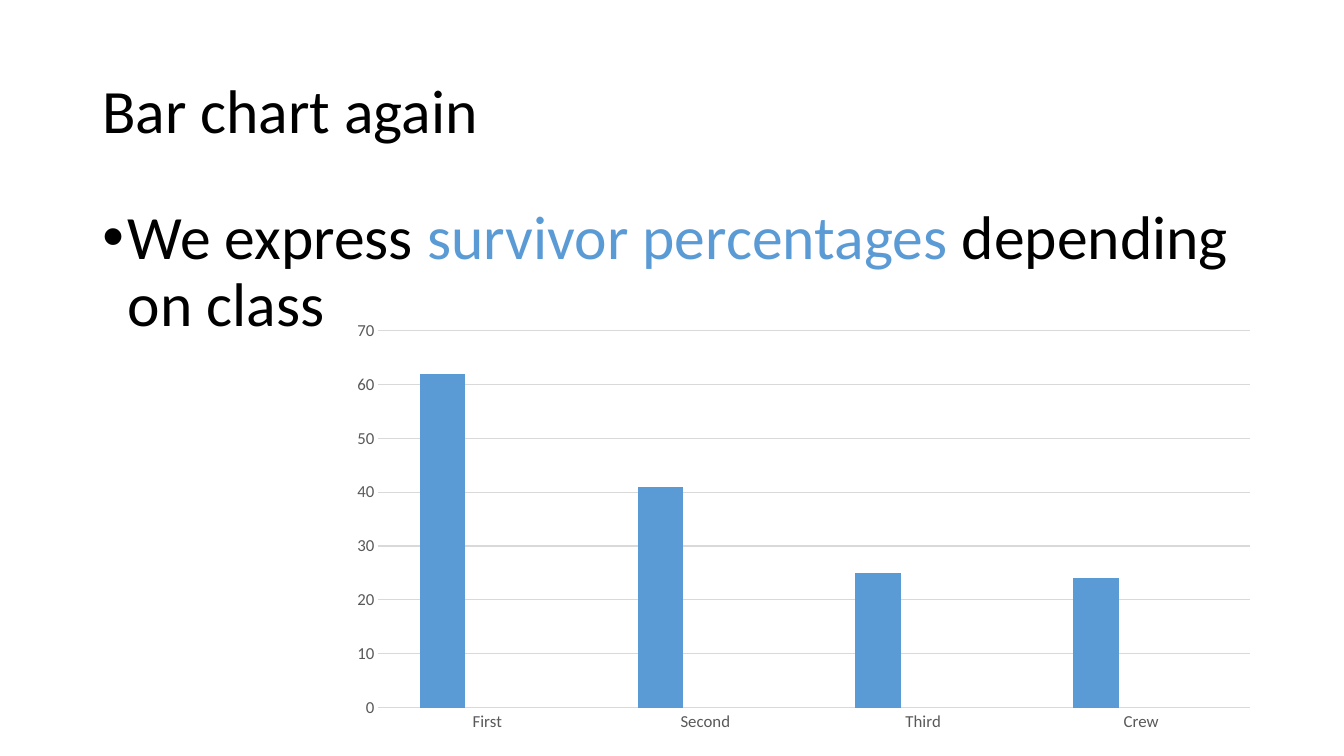
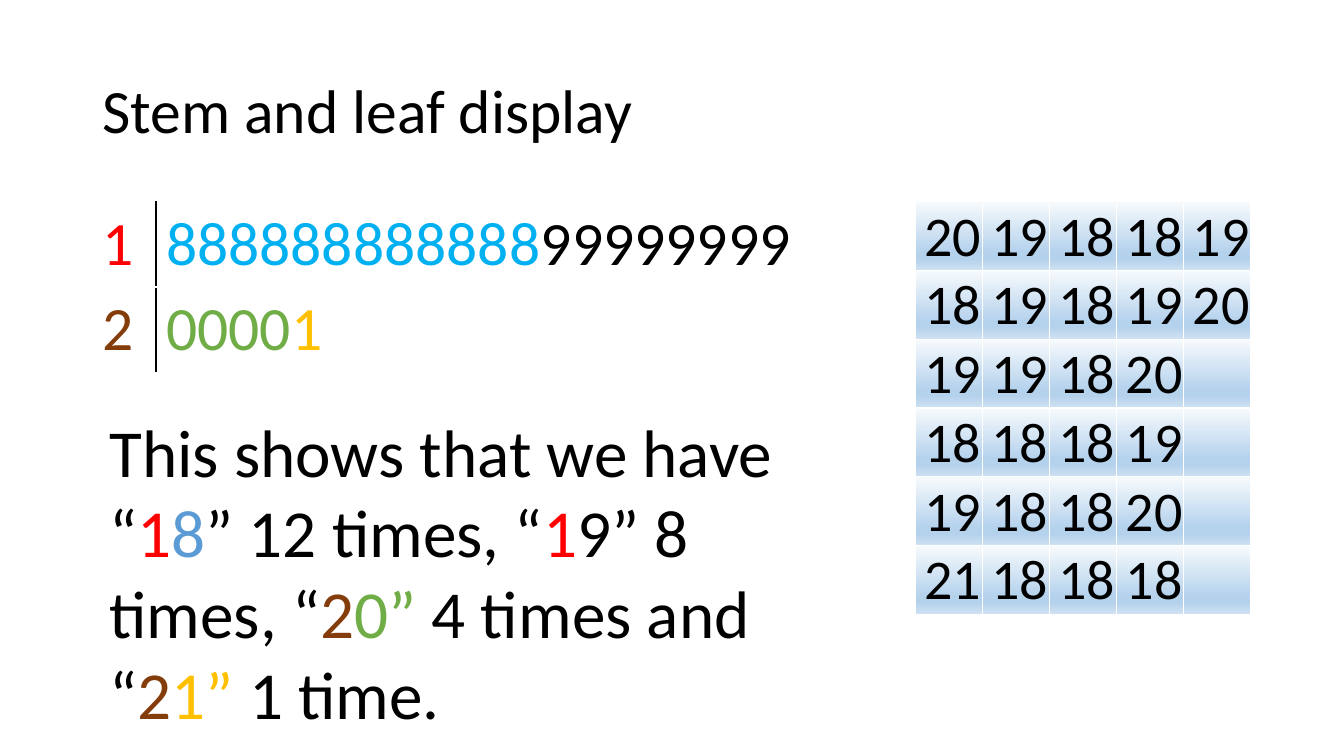
from pptx import Presentation
from pptx.chart.data import CategoryChartData
from pptx.dml.color import RGBColor
from pptx.enum.chart import XL_CHART_TYPE, XL_TICK_MARK
from pptx.enum.text import MSO_ANCHOR, PP_ALIGN
from pptx.oxml import parse_xml
from pptx.oxml.ns import nsdecls
from pptx.util import Cm, Pt

# Shared look
FONT = "Calibri"
BLACK = RGBColor(0x00, 0x00, 0x00)
WHITE = RGBColor(0xFF, 0xFF, 0xFF)
RED = RGBColor(0xFF, 0x00, 0x00)
BLUE = RGBColor(0x5B, 0x9B, 0xD5)
SKY = RGBColor(0x00, 0xB0, 0xF0)
GREEN = RGBColor(0x70, 0xAD, 0x47)
GOLD = RGBColor(0xFF, 0xC0, 0x00)
BROWN = RGBColor(0x84, 0x3C, 0x0B)
ORANGE = RGBColor(0xED, 0x7D, 0x31)
GREY = RGBColor(0xA5, 0xA5, 0xA5)
DARK = RGBColor(0x59, 0x59, 0x59)
PALE = RGBColor(0xD9, 0xD9, 0xD9)
SHADE = [(0, RGBColor(0xF7, 0xFA, 0xFD)), (74, RGBColor(0xB5, 0xD2, 0xEC)),
         (83, RGBColor(0xB5, 0xD2, 0xEC)), (100, RGBColor(0xCE, 0xE1, 0xF2))]

# Boxes in cm: left, top, width, height
LEFT, TOP = 2.33, 5.08
HEAD = (LEFT, 1.01, 29.21, 3.68)
BODY = (LEFT, TOP, 29.21, 12.09)
PLOT = (8.38, 8, 23.14, 11.05)
STEM = (LEFT, TOP, 18.24, 4.3)
LEAF = (23.06, TOP, 8.46, 10.4)
NOTE = (2.51, 10.21, 19.28, 8.46)


def setall(obj, vals):
    for key, val in vals.items():
        setattr(obj, key, val)


def style(font, size, color):
    setall(font, {"name": FONT, "size": Pt(size)})
    font.color.rgb = color


def write(para, parts, size, **form):
    """Fill a paragraph with (text, colour) runs."""
    setall(para, form)
    for text, color in parts:
        run = para.add_run()
        run.text = text
        style(run.font, size, color)


def add_text(slide, box, parts, size, anchor=MSO_ANCHOR.TOP, **form):
    frame = slide.shapes.add_textbox(*map(Cm, box)).text_frame
    setall(frame, {"word_wrap": True, "vertical_anchor": anchor})
    para = frame.paragraphs[0]
    write(para, parts, size, **form)
    return para


def add_page(deck, title):
    slide = deck.slides.add_slide(deck.slide_layouts[6])
    add_text(slide, HEAD, [(title, BLACK)], 44, MSO_ANCHOR.MIDDLE, line_spacing=0.9)
    return slide


def add_point(slide, box, parts):
    para = add_text(slide, box, parts, 44, line_spacing=0.9, space_before=Pt(10))
    props = para._p.get_or_add_pPr()
    dent = Cm(0.64)
    props.set("marL", str(dent))
    props.set("indent", str(-dent))
    props.append(parse_xml(f'<a:buFont {nsdecls("a")} typeface="Arial"/>'))
    props.append(parse_xml(f'<a:buChar {nsdecls("a")} char="•"/>'))


def add_bars(slide, box):
    data = CategoryChartData()
    data.categories = ["First", "Second", "Third", "Crew"]
    data.add_series("Series 1", [62, 41, 25, 24])
    for name in ("Series 2", "Series 3"):
        data.add_series(name, [None] * 4)
    chart = slide.shapes.add_chart(
        XL_CHART_TYPE.COLUMN_CLUSTERED, *map(Cm, box), data).chart
    setall(chart, {"has_title": False, "has_legend": False})
    style(chart.font, 10, BLACK)

    # Bars
    plot = chart.plots[0]
    setall(plot, {"gap_width": 182, "overlap": 0, "vary_by_categories": False})
    for bars, color in zip(plot.series, (BLUE, ORANGE, GREY)):
        bars.format.fill.solid()
        bars.format.fill.fore_color.rgb = color

    # Axes
    cats, vals = chart.category_axis, chart.value_axis
    for axis in (cats, vals):
        setall(axis, {"major_tick_mark": XL_TICK_MARK.NONE,
                      "minor_tick_mark": XL_TICK_MARK.NONE})
        style(axis.tick_labels.font, 12, DARK)
    setall(vals, {"minimum_scale": 0, "maximum_scale": 70, "major_unit": 10})
    vals.format.line.fill.background()
    for line in (cats.format.line, vals.major_gridlines.format.line):
        line.width = Pt(0.75)
        line.color.rgb = PALE

    # Inner plot area
    area = chart._chartSpace.chart.plotArea
    for old in area.findall("{*}layout"):
        area.remove(old)
    sides = "".join(f'<c:{key} val="{val}"/>' for key, val in (
        ("layoutTarget", "inner"), ("xMode", "edge"), ("yMode", "edge"),
        ("x", 0.05), ("y", 0.03), ("w", 0.95), ("h", 0.86)))
    area.insert(0, parse_xml(
        f'<c:layout {nsdecls("c")}><c:manualLayout>{sides}</c:manualLayout></c:layout>'))


def edge(cell, **colors):
    """Draw 1 pt cell borders, white unless a side names a colour."""
    props = cell._tc.get_or_add_tcPr()
    for spot, side in enumerate("LRTB"):
        color = colors.get(side, WHITE)
        props.insert(spot, parse_xml(
            f'<a:ln{side} {nsdecls("a")} w="{Pt(1)}"><a:solidFill>'
            f'<a:srgbClr val="{color}"/></a:solidFill></a:ln{side}>'))


def shade(cell):
    stops = "".join(f'<a:gs pos="{pos * 1000}"><a:srgbClr val="{color}"/></a:gs>'
                    for pos, color in SHADE)
    cell._tc.get_or_add_tcPr().append(parse_xml(
        f'<a:gradFill {nsdecls("a")}><a:gsLst>{stops}</a:gsLst>'
        '<a:lin ang="5400000" scaled="0"/></a:gradFill>'))


def add_grid(slide, box, rows, widths):
    grid = slide.shapes.add_table(rows, len(widths), *map(Cm, box)).table
    setall(grid, {"first_row": False, "horz_banding": False})
    for col, width in zip(grid.columns, widths):
        col.width = Cm(width)
    return grid


def add_stem(slide, box):
    rows = [
        [[("1", RED)], [("8" * 12, SKY), ("9" * 8, BLACK)]],
        [[("2", BROWN)], [("0" * 4, GREEN), ("1", GOLD)]],
    ]
    first = 1.6
    grid = add_grid(slide, box, len(rows), [first, box[2] - first])
    for r, row in enumerate(rows):
        for c, parts in enumerate(row):
            cell = grid.cell(r, c)
            write(cell.text_frame.paragraphs[0], parts, 44)
            cell.fill.background()
            edge(cell, **{"RL"[c]: BLACK})


def add_leaf(slide, box):
    rows = [
        [20, 19, 18, 18, 19],
        [18, 19, 18, 19, 20],
        [19, 19, 18, 20],
        [18, 18, 18, 19],
        [19, 18, 18, 20],
        [21, 18, 18, 18],
    ]
    cols = len(rows[0])
    grid = add_grid(slide, box, len(rows), [box[2] / cols] * cols)
    tight = {"margin_left": Cm(0.03), "margin_right": Cm(0.03),
             "margin_top": Cm(0.03), "margin_bottom": 0,
             "vertical_anchor": MSO_ANCHOR.BOTTOM}
    for r, row in enumerate(rows):
        for c in range(cols):
            cell = grid.cell(r, c)
            setall(cell, tight)
            if c < len(row):
                write(cell.text_frame.paragraphs[0], [(str(row[c]), BLACK)], 40,
                      alignment=PP_ALIGN.RIGHT)
            shade(cell)
            edge(cell)


def main():
    deck = Presentation()
    setall(deck, {"slide_width": Cm(33.87), "slide_height": Cm(19.05)})

    # Bar chart
    page = add_page(deck, "Bar chart again")
    add_point(page, BODY, [("We express ", BLACK), ("survivor percentages ", BLUE),
                           ("depending on class", BLACK)])
    add_bars(page, PLOT)

    # Stem and leaf
    page = add_page(deck, "Stem and leaf display")
    add_stem(page, STEM)
    add_leaf(page, LEAF)
    add_text(page, NOTE, [
        ("This shows that we have “", BLACK), ("1", RED), ("8", BLUE),
        ("” 12 times, “", BLACK), ("1", RED), ("9” 8 times, “", BLACK),
        ("2", BROWN), ("0” ", GREEN), ("4 times and “", BLACK),
        ("2", BROWN), ("1” ", GOLD), ("1 time.", BLACK)], 48)
    deck.save("out.pptx")


if __name__ == "__main__":
    main()
